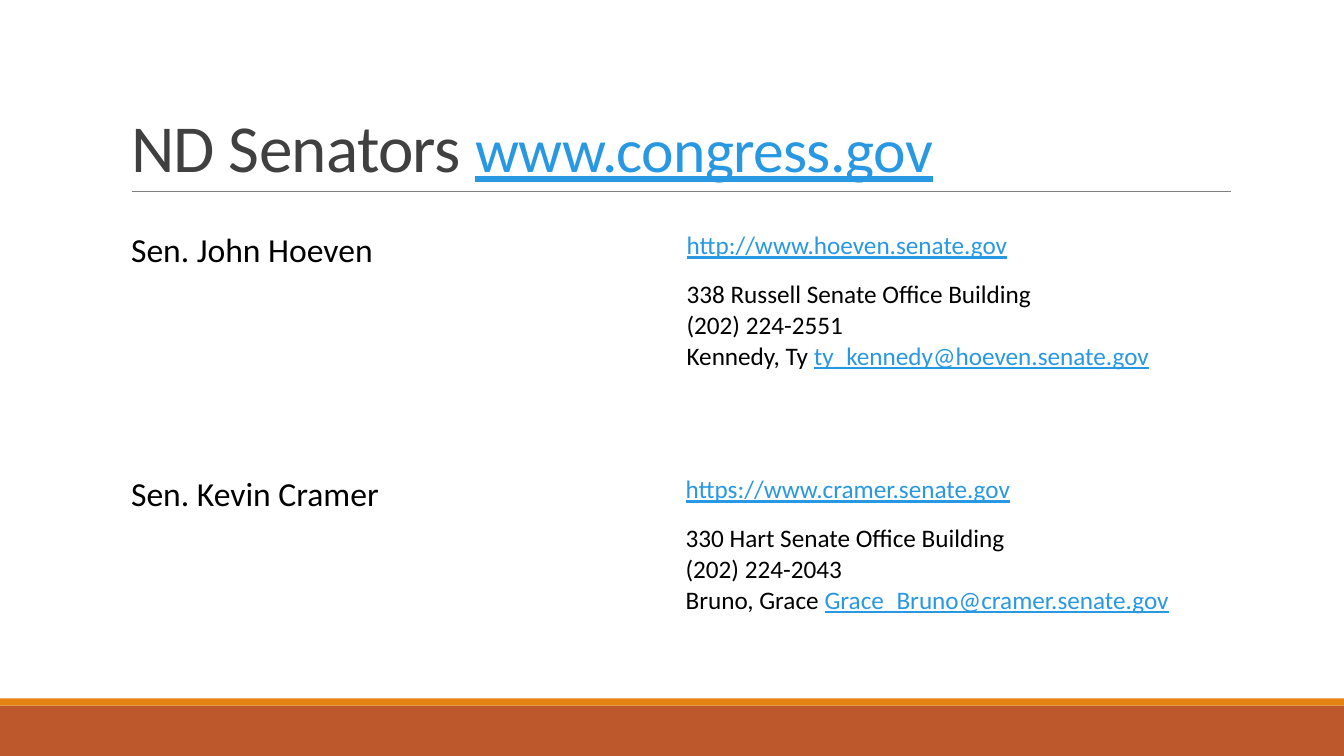
from pptx import Presentation
from pptx.dml.color import RGBColor
from pptx.enum import shapes, text
from pptx.oxml import parse_xml
from pptx.oxml.ns import nsdecls
from pptx.util import Inches, Pt

FONT = "Calibri"
COLORS = {"paper": "FFFFFF", "ink": "000000", "title": "404040", "link": "2998E3",
          "rule": "808080", "band": "BD582C", "stripe": "E48312"}

TITLE = ("ND Senators ", "www.congress.gov")
SENATORS = [
    {"name": "Sen. John Hoeven", "site": "http://www.hoeven.senate.gov",
     "office": "338 Russell Senate Office Building \v(202) 224-2551",
     "contact": "Kennedy, Ty ", "email": "ty_kennedy@hoeven.senate.gov",
     "top": 2.25, "columns": (5.51, 5.49), "rows": (0.48, 0.99, 0.38)},
    {"name": "Sen. Kevin Cramer", "site": "https://www.cramer.senate.gov",
     "office": "330 Hart Senate Office Building\v(202) 224-2043",
     "contact": "Bruno, Grace ", "email": "Grace_Bruno@cramer.senate.gov",
     "top": 4.67, "columns": (5.5, 5.5), "rows": (0.48, 0.99)},
]
BANDS = [("band", 7, 0.5), ("stripe", 6.93, 0.07)]
LEFT, WIDTH = 1.2, 11


def rgb(name):
    return RGBColor.from_string(COLORS[name])


def style(run, size, color="ink"):
    run.font.name = FONT
    run.font.size = Pt(size)
    run.font.color.rgb = rgb(color)
    run.font.underline = color == "link"


def write(paragraph, words, size, color="ink"):
    """Set the paragraph's text and format all its runs."""
    paragraph.text = words
    for run in paragraph.runs:
        style(run, size, color)


def append(paragraph, words, size, color):
    run = paragraph.add_run()
    run.text = words
    style(run, size, color)


def add_backdrop(slide):
    for color, top, height in BANDS:
        band = slide.shapes.add_shape(shapes.MSO_SHAPE.RECTANGLE, 0, Inches(top),
                                      prs.slide_width, Inches(height))
        band.shadow.inherit = False
        band.fill.solid()
        band.fill.fore_color.rgb = rgb(color)
        band.line.fill.background()
    rule = slide.shapes.add_connector(shapes.MSO_CONNECTOR.STRAIGHT, Inches(1.31),
                                      Inches(1.9), Inches(12.21), Inches(1.9))
    rule.line.color.rgb = rgb("rule")
    rule.line.width = Pt(0.5)
    rule._element.spPr.append(parse_xml(f"<a:effectLst {nsdecls('a')}/>"))


def add_title(slide):
    title = slide.shapes.title
    title.left, title.top = Inches(LEFT), Inches(0.31)
    title.width, title.height = Inches(WIDTH), Inches(1.59)
    frame = title.text_frame
    frame.auto_size = text.MSO_AUTO_SIZE.NONE
    frame.vertical_anchor = text.MSO_ANCHOR.BOTTOM
    heading = frame.paragraphs[0]
    heading.alignment = text.PP_ALIGN.LEFT
    heading.line_spacing = 0.85
    label, address = TITLE
    write(heading, label, 48, "title")
    append(heading, address, 44, "link")
    for run in heading.runs:
        run.font._element.set("spc", "-50")


def add_senator(slide, senator):
    rows, columns = senator["rows"], senator["columns"]
    table = slide.shapes.add_table(len(rows), len(columns), Inches(LEFT),
                                   Inches(senator["top"]), Inches(WIDTH),
                                   Inches(sum(rows))).table
    table.first_row = table.horz_banding = False
    for row, height in zip(table.rows, rows):
        row.height = Inches(height)
    for column, width in zip(table.columns, columns):
        column.width = Inches(width)
    for cell in table.iter_cells():
        cell.fill.solid()
        cell.fill.fore_color.rgb = rgb("paper")
        cell.margin_left, cell.margin_right = Inches(0.1), Inches(0.08)
        cell.margin_top = cell.margin_bottom = Inches(0.04)

    write(table.cell(0, 0).text_frame.paragraphs[0], senator["name"], 24)
    write(table.cell(0, 1).text_frame.paragraphs[0], senator["site"], 18, "link")
    details = table.cell(1, 1).text_frame
    write(details.paragraphs[0], senator["office"], 18)
    contact = details.add_paragraph()
    write(contact, senator["contact"], 18)
    append(contact, senator["email"], 18, "link")


prs = Presentation()
prs.slide_width, prs.slide_height = Inches(13.33), Inches(7.5)
slide = prs.slides.add_slide(prs.slide_layouts[5])
add_backdrop(slide)
add_title(slide)
for senator in SENATORS:
    add_senator(slide, senator)
prs.save("out.pptx")
